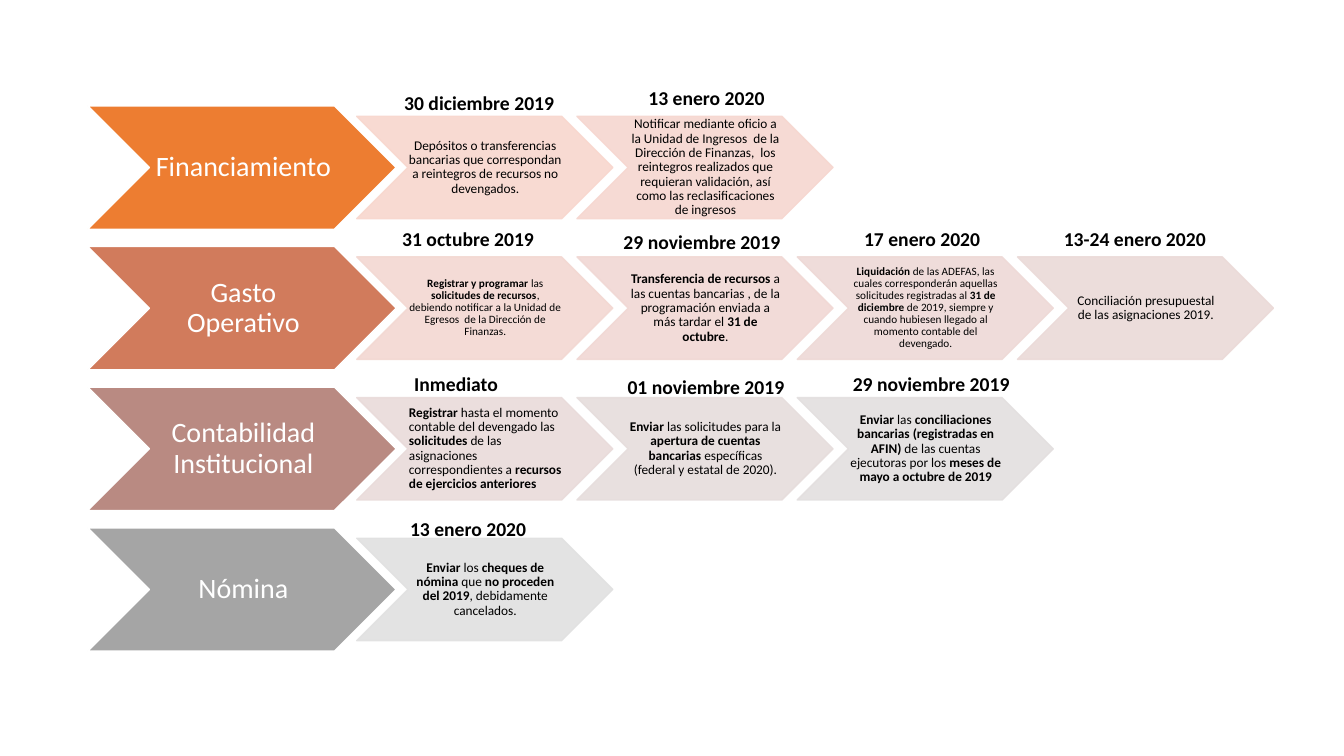
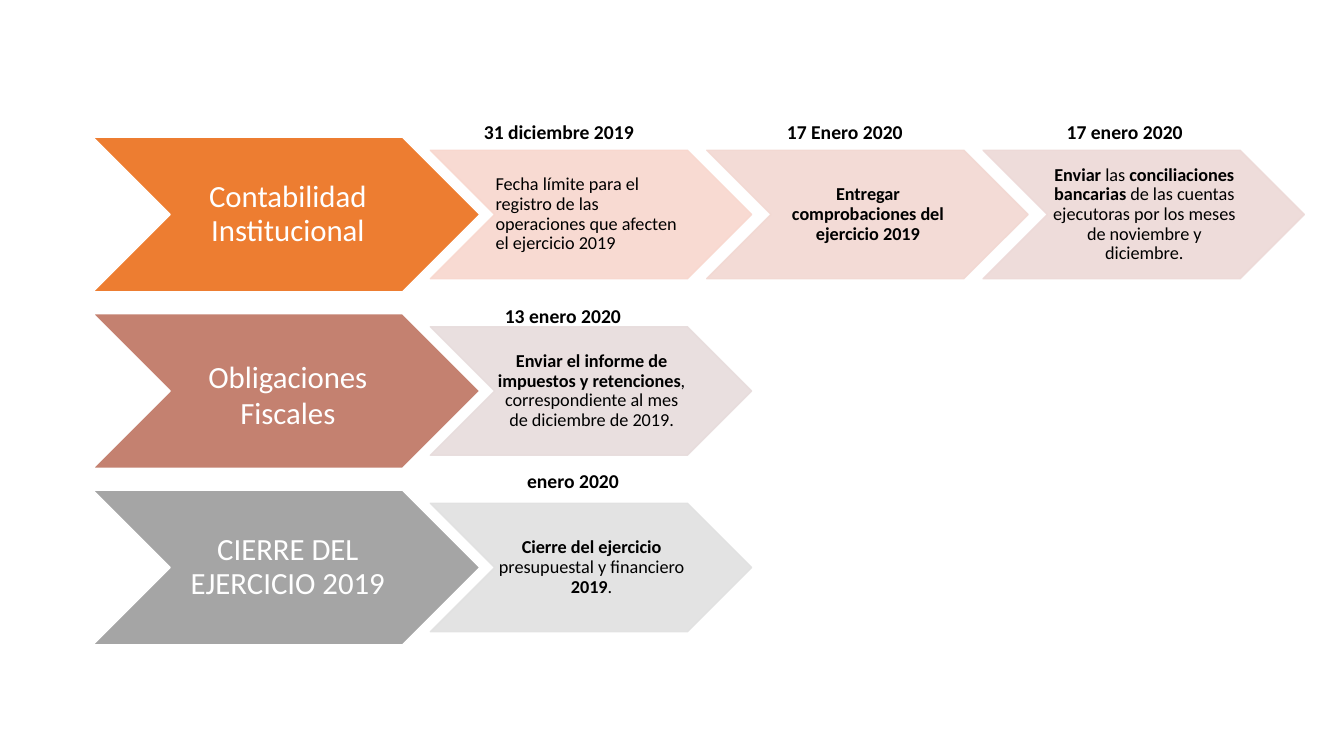
import dataclasses

import lxml.etree
import pptx
import pptx.dml.color
import pptx.enum.shapes
import pptx.enum.text
import pptx.oxml.ns
import pptx.util

Inches = pptx.util.Inches
CENTER = pptx.enum.text.PP_ALIGN.CENTER
LEFT = pptx.enum.text.PP_ALIGN.LEFT


@dataclasses.dataclass(frozen=True)
class Theme:
    """Colours, type sizes and chevron proportions shared by the slides."""

    font: str = "Calibri"
    white: str = "FFFFFF"
    black: str = "000000"
    four_row_heads: tuple = ("ED7D31", "D17B5C", "B98A82", "A5A5A5")
    four_row_steps: tuple = (
        ("F8D7CE", "F6D7D0"),
        ("F3D8D2", "F1D8D4", "EED9D6", "EBDAD8"),
        ("E9DBDA", "E6DDDC", "E3DFDF"),
        ("E1E1E1",),
    )
    three_row_heads: tuple = ("ED7D31", "C48170", "A5A5A5")
    three_row_steps: tuple = (("F8D7CE", "F2D8D2", "EDD9D7"), ("E7DCDC",), ("E1E1E1",))
    step_opacity: int = 90
    date_size: float = 14
    head_size: float = 20
    step_size: float = 9.5
    small_step_size: float = 8
    large_head_size: float = 22
    large_step_size: float = 13
    wide_space_size: float = 31
    head_aspect: float = 2.5
    step_scale: float = 0.83
    row_pitch: float = 1.14
    head_overlap: float = 0.128
    step_pitch: float = 0.86
    line_spacing: float = 0.9


THEME = Theme()


@dataclasses.dataclass
class Step:
    """A dated step; label offsets are taken from its chevron's corner."""

    date: str
    text: str
    label_shift: float
    label_rise: float
    label_width: float = 1.95
    size: float = None
    alignment: int = CENTER


@dataclasses.dataclass
class Row:
    """A heading with its steps; accent_size sizes the marked heading runs."""

    heading: str
    steps: list
    accent_size: float = None


@dataclasses.dataclass
class Board:
    """The rows of one slide with their place, sizes and colours."""

    left: float
    top: float
    head_width: float
    head_size: float
    step_size: float
    head_colors: tuple
    step_colors: tuple
    rows: list


FOUR_ROWS = Board(
    0.87, 1.05, 3.06, THEME.head_size, THEME.step_size,
    THEME.four_row_heads, THEME.four_row_steps,
    [
        Row("Financiamiento", [
            Step("30 diciembre 2019",
                 "Depósitos o transferencias bancarias que correspondan a "
                 "reintegros de recursos no devengados.", 0.24, 0.3),
            Step("13 enero 2020",
                 "Notificar mediante oficio a la Unidad de Ingresos  de la "
                 "Dirección de Finanzas,  los reintegros realizados que requieran "
                 "validación, así como las reclasificaciones de ingresos",
                 0.31, 0.35),
        ]),
        Row("Gasto Operativo", [
            Step("31 octubre 2019",
                 "**Registrar y programar **las **solicitudes de recursos**, "
                 "debiendo notificar a la Unidad de Egresos  de la Dirección de "
                 "Finanzas.", 0.13, 0.35, size=THEME.small_step_size),
            Step("29 noviembre 2019",
                 "**Transferencia de recursos **a las cuentas bancarias , de la "
                 "programación enviada a más tardar el **31 de octubre**.",
                 0.11, 0.32, 2.26),
            Step("17 enero 2020",
                 "**Liquidación** de las ADEFAS, las cuales corresponderán "
                 "aquellas solicitudes registradas al **31 de diciembre **de "
                 "2019, siempre y cuando hubiesen llegado al momento contable "
                 "del devengado.", 0.11, 0.35, 2.26, THEME.small_step_size),
            Step("13-24 enero 2020",
                 "Conciliación presupuestal de las asignaciones 2019.",
                 0.19, 0.35),
        ]),
        Row("Contabilidad Institucional", [
            Step("Inmediato",
                 "**Registrar** hasta el momento contable del devengado las "
                 "**solicitudes** de las asignaciones correspondientes a "
                 "**recursos de ejercicios anteriores**",
                 0.01, 0.3, alignment=LEFT),
            Step("01 noviembre 2019",
                 "**Enviar** las solicitudes para la **apertura de cuentas "
                 "bancarias **específicas (federal y estatal de 2020).",
                 0.19, 0.27, 2.18),
            Step("29 noviembre 2019",
                 "**Enviar** las **conciliaciones bancarias (registradas en "
                 "AFIN) **de las cuentas ejecutoras por los **meses de mayo a "
                 "octubre de 2019**", 0.2, 0.3, 2.26),
        ]),
        Row("Nómina", [
            Step("13 enero 2020",
                 "**Enviar** los **cheques de nómina **que **no proceden del "
                 "2019**, debidamente cancelados.", 0.13, 0.26),
        ]),
    ],
)

THREE_ROWS = Board(
    0.92, 1.36, 3.84, THEME.large_head_size, THEME.large_step_size,
    THEME.three_row_heads, THEME.three_row_steps,
    [
        Row("Contabilidad Institucional", [
            Step("31 diciembre 2019",
                 "Fecha límite para el registro de las operaciones que afecten "
                 "el ejercicio 2019", 0.3, 0.35, alignment=LEFT),
            Step("17 Enero 2020", "**Entregar comprobaciones del ejercicio 2019**",
                 0.24, 0.35, 2.26),
            Step("17 enero 2020",
                 "**Enviar** las **conciliaciones bancarias **de las cuentas "
                 "ejecutoras por los meses de noviembre y diciembre.",
                 0.43, 0.35),
        ]),
        Row("Obligaciones** **Fiscales", [
            Step("13 enero 2020",
                 "**Enviar el informe de impuestos y retenciones**, "
                 "correspondiente al mes de diciembre de 2019.", 0.34, 0.28),
        ], THEME.wide_space_size),
        Row("CIERRE DEL EJERCICIO 2019", [
            Step("enero 2020",
                 "**Cierre del ejercicio **presupuestal y financiero **2019**.",
                 0.44, 0.39),
        ]),
    ],
)


def rgb(color):
    """Turn a hexadecimal string into a colour."""
    return pptx.dml.color.RGBColor.from_string(color)


def write_text(paragraph, text, size, color, alignment=CENTER, accent_size=None):
    """Write text whose parts between double asterisks are accented."""
    paragraph.alignment = alignment
    paragraph.font.name = THEME.font
    paragraph.font.size = pptx.util.Pt(size)
    paragraph.font.color.rgb = rgb(color)
    for index, part in enumerate(text.split("**")):
        if not part:
            continue
        run = paragraph.add_run()
        run.text = part
        if index % 2 and accent_size:
            run.font.size = pptx.util.Pt(accent_size)
        elif index % 2:
            run.font.bold = True


def set_opacity(shape, percent):
    """Make the fill and line of a shape partly transparent."""
    for color in shape._element.spPr.iter(pptx.oxml.ns.qn("a:srgbClr")):
        alpha = lxml.etree.SubElement(color, pptx.oxml.ns.qn("a:alpha"))
        alpha.set("val", str(percent * 1000))


def add_chevron(slide, box, fill, line, left_inset):
    """Add a chevron in the box and return it ready for text."""
    shape = slide.shapes.add_shape(
        pptx.enum.shapes.MSO_SHAPE.CHEVRON, *map(Inches, box))
    shape.shadow.inherit = False
    shape.fill.solid()
    shape.fill.fore_color.rgb = rgb(fill)
    shape.line.color.rgb = rgb(line)
    shape.line.width = pptx.util.Pt(1)
    frame = shape.text_frame
    frame.word_wrap = True
    frame.vertical_anchor = pptx.enum.text.MSO_ANCHOR.MIDDLE
    frame.margin_left = Inches(left_inset)
    frame.margin_right = 0
    frame.margin_top = frame.margin_bottom = Inches(0.01)
    frame.paragraphs[0].line_spacing = THEME.line_spacing
    return shape


def add_date(slide, left, top, width, date):
    """Add the bold date label above a step."""
    shape = slide.shapes.add_textbox(*map(Inches, (left, top, width, 0.34)))
    frame = shape.text_frame
    frame.word_wrap = True
    frame.auto_size = pptx.enum.text.MSO_AUTO_SIZE.SHAPE_TO_FIT_TEXT
    paragraph = frame.paragraphs[0]
    write_text(paragraph, date, THEME.date_size, THEME.black)
    paragraph.font.bold = True


def add_step(slide, box, step, color, size):
    """Add a pale chevron with its text and date."""
    shape = add_chevron(slide, box, color, color, 0.01)
    set_opacity(shape, THEME.step_opacity)
    write_text(shape.text_frame.paragraphs[0], step.text, step.size or size,
               THEME.black, step.alignment)
    add_date(slide, box[0] + step.label_shift, box[1] - step.label_rise,
             step.label_width, step.date)


def add_row(slide, box, row, head_color, step_colors, head_size, step_size):
    """Add a heading chevron in the box and its steps to the right."""
    left, top, width, height = box
    head = add_chevron(slide, box, head_color, THEME.white, 0.03)
    write_text(head.text_frame.paragraphs[0], row.heading, head_size,
               THEME.white, accent_size=row.accent_size)
    step_width = width * THEME.step_scale
    step_height = height * THEME.step_scale
    step_left = left + width * (1 - THEME.head_overlap)
    step_top = top + (height - step_height) / 2
    for index, (step, color) in enumerate(zip(row.steps, step_colors)):
        offset = index * step_width * THEME.step_pitch
        step_box = (step_left + offset, step_top, step_width, step_height)
        add_step(slide, step_box, step, color, step_size)


def add_board(presentation, board):
    """Add a slide with evenly spaced rows of chevrons."""
    slide = presentation.slides.add_slide(presentation.slide_layouts[6])
    height = board.head_width / THEME.head_aspect
    rows = zip(board.rows, board.head_colors, board.step_colors)
    for index, (row, head_color, step_colors) in enumerate(rows):
        top = board.top + index * height * THEME.row_pitch
        add_row(slide, (board.left, top, board.head_width, height), row,
                head_color, step_colors, board.head_size, board.step_size)


def main():
    """Build and save the presentation."""
    presentation = pptx.Presentation()
    presentation.slide_width = Inches(13.33)
    presentation.slide_height = Inches(7.5)
    for board in (FOUR_ROWS, THREE_ROWS):
        add_board(presentation, board)
    presentation.save("out.pptx")


if __name__ == "__main__":
    main()
